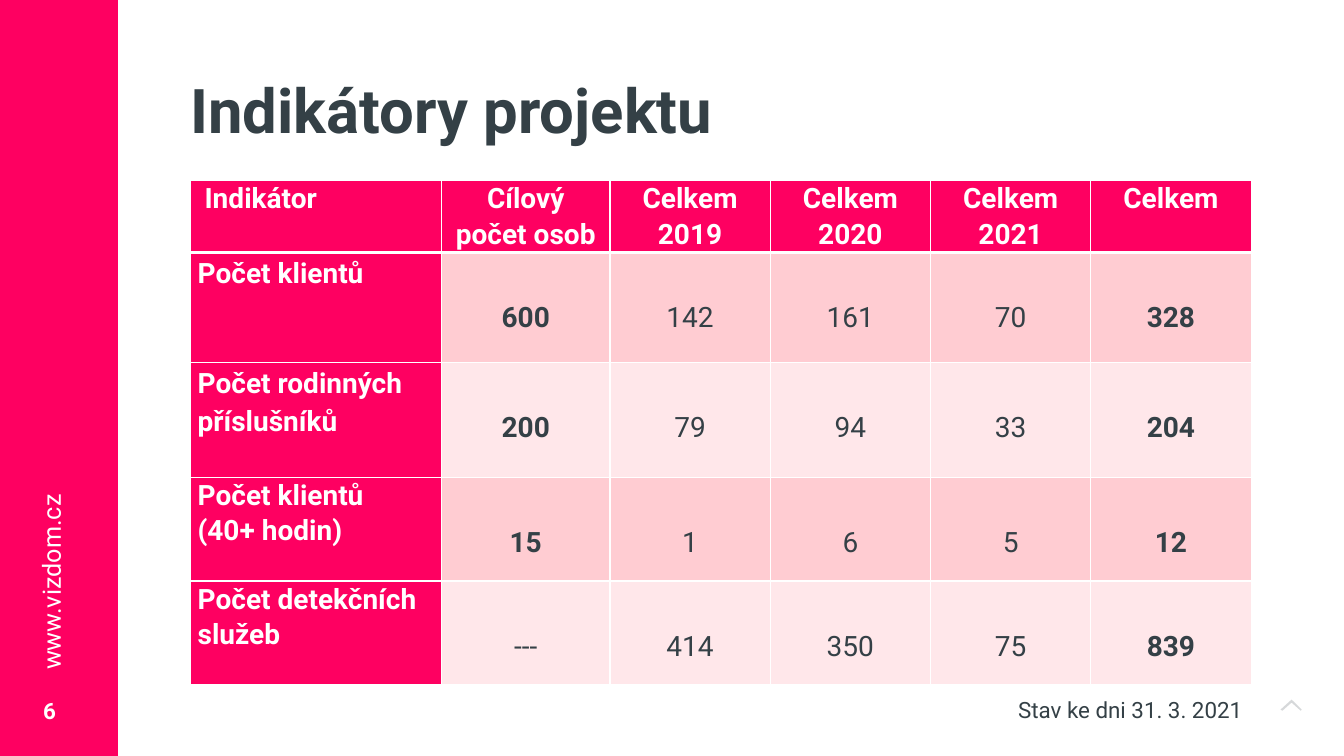
import pptx
import pptx.dml.color
import pptx.enum.shapes
import pptx.enum.text
import pptx.oxml
import pptx.oxml.ns
import pptx.util

PX = 9144  # EMU per px, 100 px to the inch
COLORS = {"pink": "FE0061", "dark": "344046", "white": "FFFFFF",
          "band_odd": "FFCCD2", "band_even": "FFE7EA"}
ALIGN = pptx.enum.text.PP_ALIGN
ANCHOR = pptx.enum.text.MSO_ANCHOR


def emu(*lengths):
    return [pptx.util.Emu(length * PX) for length in lengths]


def rgb(name):
    return pptx.dml.color.RGBColor.from_string(COLORS[name])


def write(frame, text, size=20, color="dark", bold=False, align=ALIGN.LEFT, spacing=1.0):
    """Put text in a frame, one paragraph per line."""
    frame.word_wrap = True
    for index, line in enumerate(text.split("\n")):
        paragraph = frame.paragraphs[0] if index == 0 else frame.add_paragraph()
        paragraph.alignment = align
        paragraph.line_spacing = spacing
        run = paragraph.add_run()
        run.text = line
        run.font.name = "Roboto"
        run.font.size = pptx.util.Pt(size)
        run.font.bold = bold
        run.font.color.rgb = rgb(color)


class SlideBuilder:
    def __init__(self, slide):
        self.slide = slide

    def paint(self, shape, color):
        shape.shadow.inherit = False
        shape.fill.solid()
        shape.fill.fore_color.rgb = rgb(color)
        shape.line.fill.background()

    def rectangle(self, box, color):
        kind = pptx.enum.shapes.MSO_SHAPE.RECTANGLE
        self.paint(self.slide.shapes.add_shape(kind, *emu(*box)), color)

    def outline(self, points, color, opacity):
        builder = self.slide.shapes.build_freeform(*points[0], scale=PX)
        builder.add_line_segments(points[1:], close=True)
        shape = builder.convert_to_shape()
        self.paint(shape, color)
        tint = shape.fill._xPr.find(".//" + pptx.oxml.ns.qn("a:srgbClr"))
        tint.append(pptx.oxml.parse_xml(
            f'<a:alpha {pptx.oxml.ns.nsdecls("a")} val="{opacity * 1000}"/>'))

    def text(self, box, text, anchor=ANCHOR.TOP, rotation=0, side_inset=10, **style):
        shape = self.slide.shapes.add_textbox(*emu(*box))
        shape.rotation = rotation
        frame = shape.text_frame
        frame.vertical_anchor = anchor
        frame.margin_left, frame.margin_right = emu(side_inset, side_inset)
        write(frame, text, **style)

    def table(self, left, top, widths, heights):
        box = emu(left, top, sum(widths), sum(heights))
        table = self.slide.shapes.add_table(len(heights), len(widths), *box).table
        table.horz_banding = False
        for column, width in zip(table.columns, emu(*widths)):
            column.width = width
        for row, height in zip(table.rows, emu(*heights)):
            row.height = height
        return table

    def cell(self, cell, text, fill, top_line, bottom_line, **style):
        cell.margin_left, cell.margin_right, cell.margin_top, cell.margin_bottom = emu(7, 7, 0, 0)
        cell.fill.solid()
        cell.fill.fore_color.rgb = rgb(fill)
        borders = {"L": 1, "R": 1, "T": top_line, "B": bottom_line}
        for index, (side, points) in enumerate(borders.items()):
            cell._tc.get_or_add_tcPr().insert(index, pptx.oxml.parse_xml(
                f'<a:ln{side} {pptx.oxml.ns.nsdecls("a")} w="{points * 12700}"><a:solidFill>'
                f'<a:srgbClr val="{COLORS["white"]}"/></a:solidFill></a:ln{side}>'))
        write(cell.text_frame, text, **style)


INDICATORS = [
    ["\u00a0Indikátor".replace("\u00a0", " "), "Cílový počet osob", "Celkem 2019",
     "Celkem 2020", "Celkem 2021", "Celkem"],
    ["Počet klientů", "600", "142", "161", "70", "328"],
    ["Počet rodinných příslušníků", "200", "79", "94", "33", "204"],
    ["Počet klientů\n(40+ hodin)", "15", "1", "6", "5", "12"],
    ["Počet detekčních služeb", "---", "414", "350", "75", "839"],
]
LABEL_SPACING = [1.07, 1.15, 1.15, 1.07, 1.07]


def fill_indicators(builder, table):
    for r, values in enumerate(INDICATORS):
        for c, value in enumerate(values):
            label = r == 0 or c == 0
            band = "band_odd" if r % 2 else "band_even"
            builder.cell(
                table.cell(r, c), value,
                fill="pink" if label else band,
                top_line=3 if r == 1 else 1,
                bottom_line=3 if r == 0 else 1,
                color="white" if label else "dark",
                bold=label or c == 5 or (c == 1 and value != "---"),
                align=ALIGN.CENTER if c else ALIGN.LEFT,
                spacing=LABEL_SPACING[r] if label else 2.5)


def main():
    deck = pptx.Presentation()
    deck.slide_width, deck.slide_height = emu(1333, 750)
    builder = SlideBuilder(deck.slides.add_slide(deck.slide_layouts[6]))

    # Side bar with page number and web address
    chevron = [(1281, 694), (1291, 704), (1290, 705), (1281, 697), (1272, 705), (1270, 704)]
    builder.outline(chevron, "dark", opacity=20)
    builder.rectangle((0, 0, 117, 750), "pink")
    builder.text((33, 675, 50, 60), "6", anchor=ANCHOR.MIDDLE, size=16, color="white", bold=True)
    builder.text((-68, 535, 238, 41), "www.vizdom.cz", rotation=270, size=18, color="white")

    # Title
    builder.text((189, 40, 1053, 145), "Indikátory projektu", anchor=ANCHOR.MIDDLE,
                 side_inset=0, size=44, bold=True, spacing=0.9)

    # Indicator table and its date
    table = builder.table(189, 179, [249, 167] + [159] * 4, [68, 109, 114, 103, 103])
    fill_indicators(builder, table)
    builder.text((835, 686, 407, 37), "Stav ke dni 31. 3. 2021", size=16, align=ALIGN.RIGHT)

    deck.save("out.pptx")


if __name__ == "__main__":
    main()
